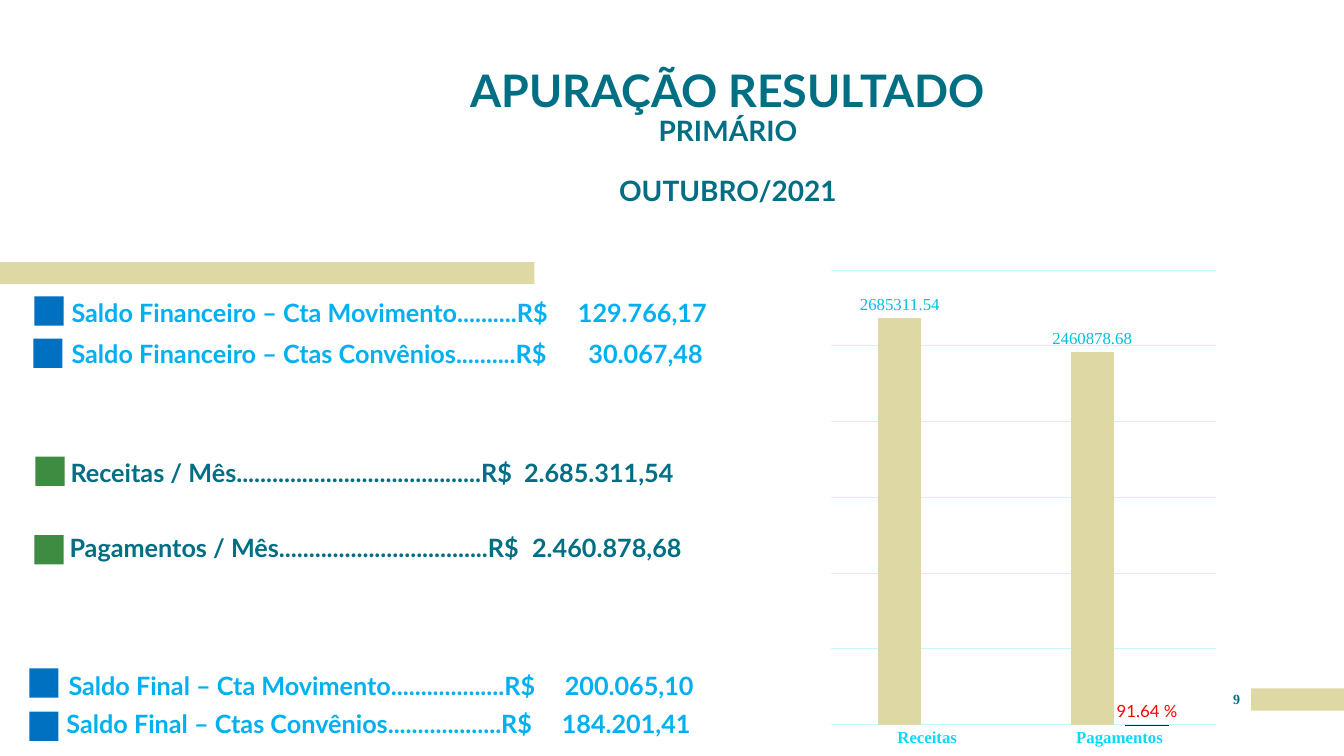
import pptx
import pptx.util
import pptx.chart.data
import pptx.dml.color
import pptx.enum.chart
import pptx.enum.shapes
import pptx.enum.text
import pptx.oxml
import pptx.oxml.ns
from lxml import etree

Inches, Pt = pptx.util.Inches, pptx.util.Pt
RGBColor = pptx.dml.color.RGBColor
ALIGN, ANCHOR = pptx.enum.text.PP_ALIGN, pptx.enum.text.MSO_ANCHOR

SAND = RGBColor(0xDE, 0xD8, 0xA4)
TEAL = RGBColor(0x00, 0x6F, 0x83)
SKY = RGBColor(0x00, 0xB0, 0xF0)
BLUE = RGBColor(0x00, 0x70, 0xC0)
GREEN = RGBColor(0x3D, 0x8C, 0x41)
PALE = RGBColor(0xC6, 0xF6, 0xFF)
CYAN = RGBColor(0x09, 0xD9, 0xFF)
LABEL = RGBColor(0x00, 0xBF, 0xE2)
MAROON = RGBColor(0x79, 0x00, 0x00)
RED = RGBColor(0xFF, 0x00, 0x00)


def add_text(tf, text, size=18, color=TEAL, font="Lato", align=ALIGN.LEFT,
             anchor=ANCHOR.BOTTOM, spacing=0.9, before=0, bottom=0, first=True):
    tf.word_wrap = True
    tf.auto_size = pptx.enum.text.MSO_AUTO_SIZE.NONE
    tf.vertical_anchor = anchor
    tf.margin_left = tf.margin_right = tf.margin_top = 0
    tf.margin_bottom = Inches(bottom)
    p = tf.paragraphs[0] if first else tf.add_paragraph()
    p.alignment, p.line_spacing, p.space_before = align, spacing, Pt(before)
    r = p.add_run()
    r.text = text
    r.font.size, r.font.bold, r.font.name = Pt(size), True, font
    r.font.color.rgb = color
    return p


def add_block(left, top, width, height, color):
    sp = s.shapes.add_shape(pptx.enum.shapes.MSO_SHAPE.RECTANGLE, Inches(left),
                            Inches(top), Inches(width), Inches(height))
    sp.shadow.inherit = False
    sp.fill.solid()
    sp.fill.fore_color.rgb = color
    sp.line.fill.background()


prs = pptx.Presentation()
prs.slide_width, prs.slide_height = Inches(13.33), Inches(7.5)
s = prs.slides.add_slide(prs.slide_layouts[5])

# Accent bars
add_block(12.41, 6.83, 0.92, 0.22, SAND)
add_block(0, 2.6, 5.3, 0.22, SAND)

# Title
title = s.shapes.title
title.left, title.top = Inches(4.05), Inches(0.11)
title.width, title.height = Inches(6.34), Inches(2.25)
for i, (text, size, before) in enumerate([("APURAÇÃO RESULTADO", 32, 0),
                                          ("PRIMÁRIO", 20, 0),
                                          ("OUTUBRO/2021", 20, 21.6)]):
    add_text(title.text_frame, text, size=size, align=ALIGN.CENTER,
             before=before, bottom=0.3, first=i == 0)

# Balance lines: marker left/top/colour, text left/top/height, amount right edge
lines = [
    (0.34, 2.94, BLUE, 0.71, 2.87, 0.38, 7.01, SKY,
     "Saldo Financeiro – Cta Movimento..........R$", "129.766,17"),
    (0.33, 3.36, BLUE, 0.71, 3.28, 0.38, 6.97, SKY,
     "Saldo Financeiro – Ctas Convênios..........R$", "30.067,48"),
    (0.35, 4.53, GREEN, 0.7, 4.46, 0.38, 6.68, TEAL,
     "Receitas / Mês.........................................R$", "2.685.311,54"),
    (0.34, 5.31, GREEN, 0.69, 5.2, 0.38, 6.76, TEAL,
     "Pagamentos / Mês...................................R$", "2.460.878,68"),
    (0.29, 6.63, BLUE, 0.68, 6.5, 0.45, 6.88, SKY,
     "Saldo Final – Cta Movimento...................R$", "200.065,10"),
    (0.29, 7.06, BLUE, 0.66, 6.95, 0.38, 6.85, SKY,
     "Saldo Final – Ctas Convênios...................R$", "184.201,41"),
]
for mark_x, mark_y, mark, x, y, height, right, color, label, amount in lines:
    add_block(mark_x, mark_y, 0.29, 0.29, mark)
    box = s.shapes.add_textbox(Inches(x), Inches(y), Inches(6.7), Inches(height))
    p = add_text(box.text_frame, f"{label}\t{amount}", color=color, before=6)
    tabs = etree.SubElement(p._p.get_or_add_pPr(), pptx.oxml.ns.qn("a:tabLst"))
    etree.SubElement(tabs, pptx.oxml.ns.qn("a:tab"),
                     pos=str(Inches(right - x)), algn="r")

# Chart
data = pptx.chart.data.CategoryChartData()
data.categories = ["Receitas", "Pagamentos"]
data.add_series("Series 1", [2685311.54, 2460878.68])
data.add_series("Series 2", [None, 91.64])
chart = s.shapes.add_chart(pptx.enum.chart.XL_CHART_TYPE.COLUMN_CLUSTERED,
                           Inches(7.44), Inches(2.51), Inches(4.93), Inches(4.99),
                           data).chart
chart.has_legend = chart.has_title = False
chart.font.size, chart.font.name = Pt(10), "Times New Roman"
chart.font.color.rgb = TEAL

cat = chart.category_axis
cat.major_tick_mark = pptx.enum.chart.XL_TICK_MARK.NONE
cat.format.line.color.rgb, cat.format.line.width = PALE, Pt(0.75)
font = cat.tick_labels.font
font.size, font.bold, font.name = Pt(12), True, "Times New Roman"
font.color.rgb = CYAN

val = chart.value_axis
val.minimum_scale, val.maximum_scale, val.major_unit = 0, 3000000, 500000
val.has_major_gridlines = True
grid = val.major_gridlines.format.line
grid.color.rgb, grid.width = PALE, Pt(0.75)
val.visible = False

plot = chart.plots[0]
plot.gap_width, plot.overlap, plot.vary_by_categories = 219, -27, False
styles = [(SAND, LABEL, "Times New Roman", "0.00"),
          (MAROON, RED, "Lato", '0.00" %"')]
for series, (fill, color, name, fmt) in zip(plot.series, styles):
    series.format.fill.solid()
    series.format.fill.fore_color.rgb = fill
    labels = series.data_labels
    labels.show_value = True
    labels.position = pptx.enum.chart.XL_LABEL_POSITION.OUTSIDE_END
    labels.number_format, labels.number_format_is_linked = fmt, False
    labels.font.size, labels.font.bold, labels.font.name = Pt(12), False, name
    labels.font.color.rgb = color

# Fixed inner plot area
area = chart._chartSpace.chart.plotArea
for old in area.findall(pptx.oxml.ns.qn("c:layout")):
    area.remove(old)
layout = etree.Element(pptx.oxml.ns.qn("c:layout"))
manual = etree.SubElement(layout, pptx.oxml.ns.qn("c:manualLayout"))
for tag, value in [("layoutTarget", "inner"), ("xMode", "edge"), ("yMode", "edge"),
                   ("x", 0.163), ("y", 0.034), ("w", 0.774), ("h", 0.904)]:
    etree.SubElement(manual, pptx.oxml.ns.qn(f"c:{tag}"), val=str(value))
area.insert(0, layout)

# Page number
box = s.shapes.add_textbox(Inches(12.12), Inches(6.85), Inches(0.29), Inches(0.25))
add_text(box.text_frame, "9", size=10, font="Times New Roman", align=ALIGN.CENTER,
         anchor=ANCHOR.TOP, spacing=1.0)

prs.save("out.pptx")
